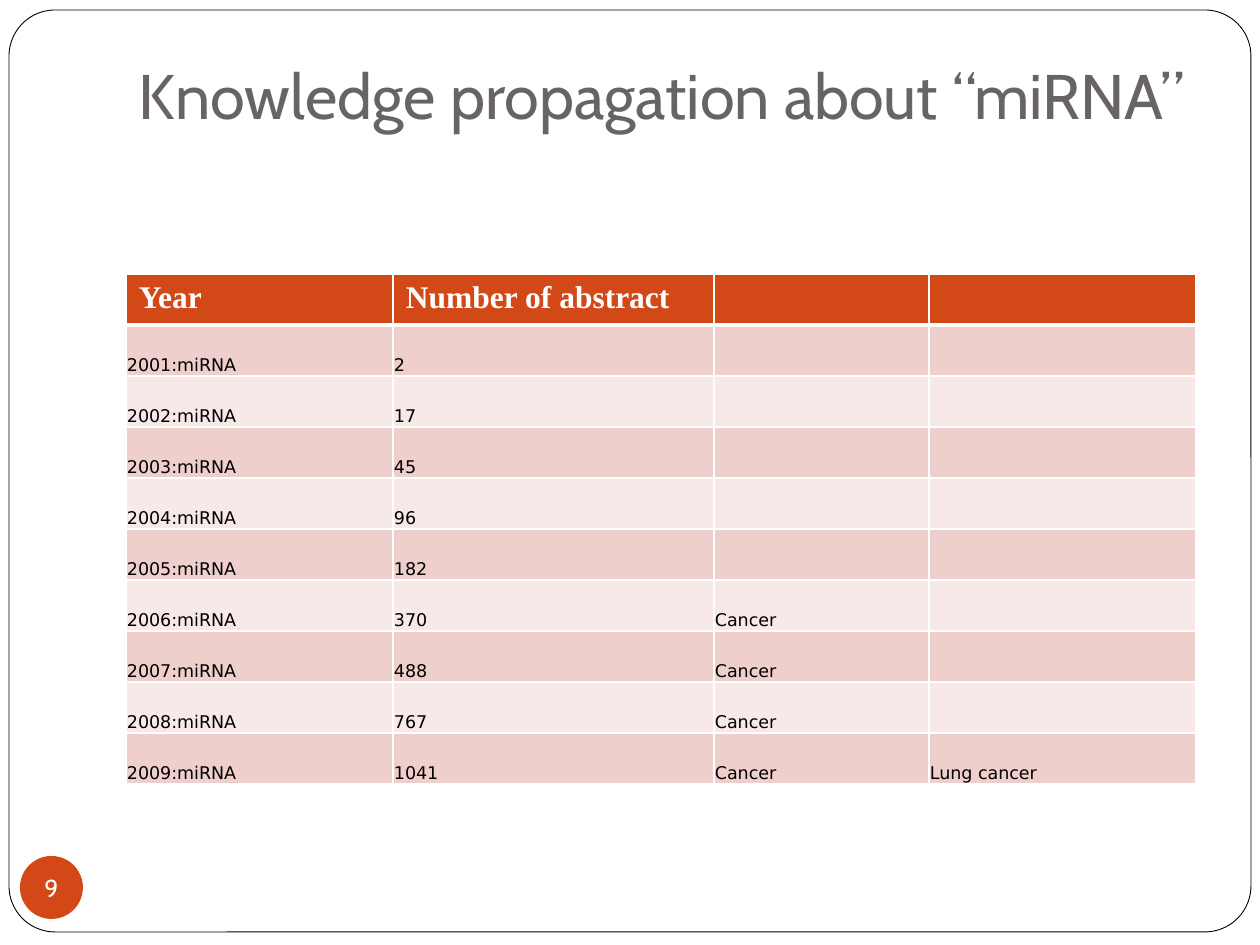
from dataclasses import dataclass

from lxml import etree
from pptx import Presentation, util as u
from pptx.dml.color import RGBColor
from pptx.enum import shapes, text
from pptx.oxml import ns

EMU_PER_PX = 914400 / 126
WHITE = RGBColor(0xFF, 0xFF, 0xFF)
BLACK = RGBColor(0, 0, 0)
GRAY = RGBColor(0x69, 0x64, 0x64)
ORANGE = RGBColor(0xD3, 0x48, 0x17)
BANDS = (RGBColor(0xEF, 0xCF, 0xCC), RGBColor(0xF7, 0xE9, 0xE8))

COLUMN_WIDTHS = (267, 321, 215, 267)
ROW_HEIGHT = 51
HEADERS = ("Year", "Number of abstract", "", "")
ABSTRACT_COUNTS = (2, 17, 45, 96, 182, 370, 488, 767, 1041)
FIRST_YEAR = 2001
FIRST_CANCER_YEAR = 2006
FIRST_LUNG_CANCER_YEAR = 2009


def px(length: int) -> u.Emu:
    return u.Emu(round(length * EMU_PER_PX))


@dataclass(frozen=True)
class Type:
    font: str
    size: int
    color: RGBColor
    bold: bool = False


@dataclass(frozen=True)
class CellStyle:
    type: Type
    anchor: text.MSO_ANCHOR
    margins: tuple[int, int, int, int]
    bottom_border: int


TITLE_TYPE = Type("Cabin", 36, GRAY)
NUMBER_TYPE = Type("Cabin", 14, WHITE)
HEADER_STYLE = CellStyle(
    Type("Times New Roman", 18, WHITE, True), text.MSO_ANCHOR.TOP, (13, 6, 13, 6), 3
)
BODY_STYLE = CellStyle(
    Type("DejaVu Sans", 10, BLACK), text.MSO_ANCHOR.BOTTOM, (1, 1, 1, 0), 1
)


def write(frame, wording: str, style: Type) -> None:
    frame.text = wording
    for para in frame.paragraphs:
        for span in para.runs:
            span.font.name = style.font
            span.font.size = u.Pt(style.size)
            span.font.bold = style.bold
            span.font.color.rgb = style.color


def set_margins(holder, margins: tuple[int, int, int, int]) -> None:
    for side, margin in zip(("left", "top", "right", "bottom"), margins):
        setattr(holder, f"margin_{side}", px(margin))


def add_shape(page, kind, left: int, top: int, width: int, height: int, fill: RGBColor):
    shape = page.shapes.add_shape(kind, px(left), px(top), px(width), px(height))
    shape.shadow.inherit = False
    shape.fill.solid()
    shape.fill.fore_color.rgb = fill
    return shape


def add_frame(page) -> None:
    frame = add_shape(
        page, shapes.MSO_SHAPE.ROUNDED_RECTANGLE, 9, 10, 1242, 922, WHITE
    )
    frame.adjustments[0] = 0.05
    frame.line.color.rgb = BLACK
    frame.line.width = u.Pt(0.5)


def add_title(page) -> None:
    box = page.shapes.add_textbox(px(126), px(38), px(1071), px(107))
    frame = box.text_frame
    frame.word_wrap = True
    frame.vertical_anchor = text.MSO_ANCHOR.BOTTOM
    set_margins(frame, (13, 6, 12, 13))
    write(frame, "Knowledge propagation about “miRNA”", TITLE_TYPE)


def add_page_number(page) -> None:
    badge = add_shape(page, shapes.MSO_SHAPE.OVAL, 20, 856, 63, 63, ORANGE)
    badge.line.fill.background()
    frame = badge.text_frame
    frame.word_wrap = False
    frame.vertical_anchor = text.MSO_ANCHOR.MIDDLE
    set_margins(frame, (0, 0, 0, 0))
    write(frame, "9", NUMBER_TYPE)
    frame.paragraphs[0].alignment = text.PP_ALIGN.CENTER


def add_borders(cell, widths: dict[str, int]) -> None:
    properties = cell._tc.get_or_add_tcPr()
    for index, (side, width) in enumerate(widths.items()):
        line = etree.Element(ns.qn(f"a:{side}"), w=str(u.Pt(width)))
        fill = etree.SubElement(line, ns.qn("a:solidFill"))
        etree.SubElement(fill, ns.qn("a:srgbClr"), val=str(WHITE))
        properties.insert(index, line)


def fill_cell(cell, wording: str, style: CellStyle, fill: RGBColor, top: int) -> None:
    cell.fill.solid()
    cell.fill.fore_color.rgb = fill
    cell.vertical_anchor = style.anchor
    set_margins(cell, style.margins)
    write(cell.text_frame, wording, style.type)
    add_borders(cell, {"lnL": 1, "lnR": 1, "lnT": top, "lnB": style.bottom_border})


def abstract_row(year: int, count: int) -> tuple[str, ...]:
    return (
        f"{year}:miRNA",
        str(count),
        "Cancer" if year >= FIRST_CANCER_YEAR else "",
        "Lung cancer" if year >= FIRST_LUNG_CANCER_YEAR else "",
    )


def add_abstract_table(page) -> None:
    rows = [HEADERS] + [
        abstract_row(year, count)
        for year, count in enumerate(ABSTRACT_COUNTS, FIRST_YEAR)
    ]
    table = page.shapes.add_table(
        len(rows), len(COLUMN_WIDTHS), px(126), px(274),
        px(sum(COLUMN_WIDTHS)), px(ROW_HEIGHT * len(rows)),
    ).table
    for column, width in zip(table.columns, COLUMN_WIDTHS):
        column.width = px(width)
    for index, wordings in enumerate(rows):
        table.rows[index].height = px(ROW_HEIGHT)
        style = BODY_STYLE if index else HEADER_STYLE
        fill = BANDS[(index - 1) % 2] if index else ORANGE
        top = HEADER_STYLE.bottom_border if index == 1 else 1
        for cell, wording in zip(table.rows[index].cells, wordings):
            fill_cell(cell, wording, style, fill, top)


def main() -> None:
    deck = Presentation()
    deck.slide_width, deck.slide_height = px(1260), px(945)
    page = deck.slides.add_slide(deck.slide_layouts[6])
    add_frame(page)
    add_title(page)
    add_page_number(page)
    add_abstract_table(page)
    deck.save("out.pptx")


if __name__ == "__main__":
    main()
